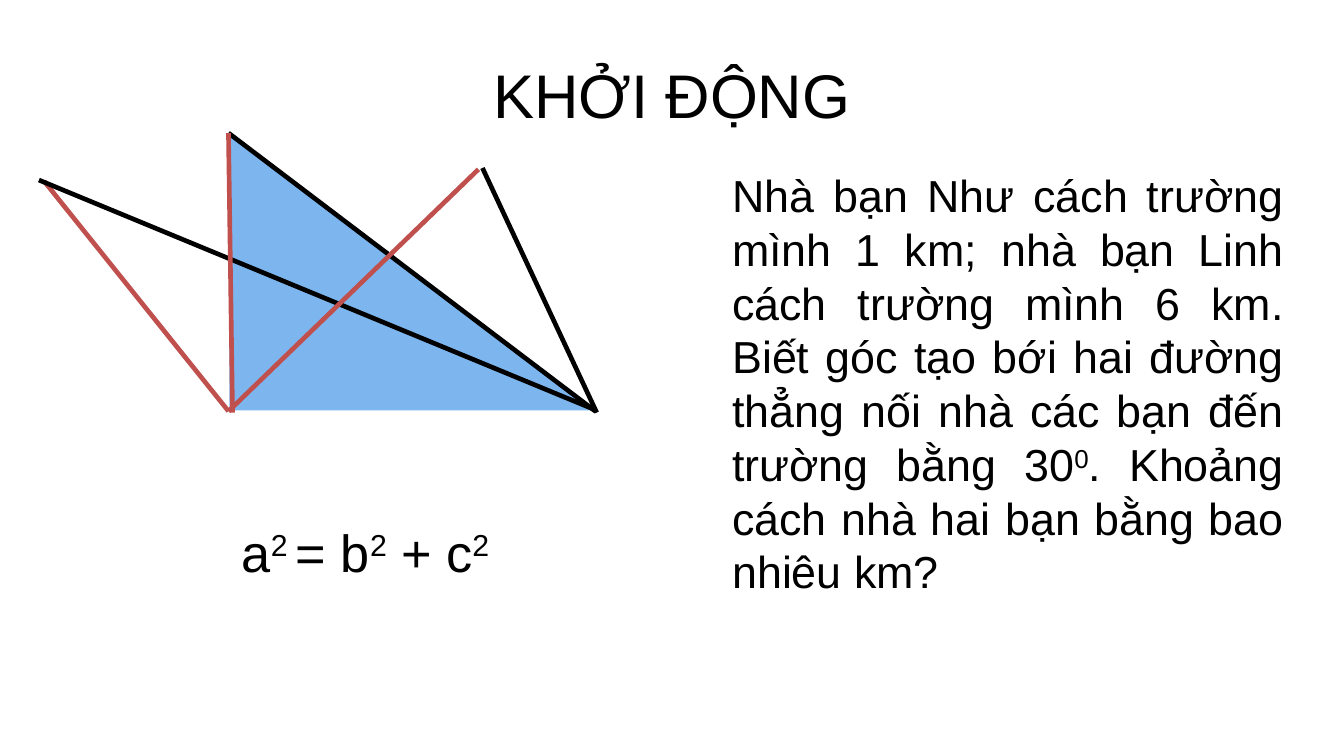
from lxml.etree import SubElement
from pptx import Presentation
from pptx.dml.color import RGBColor
from pptx.enum.shapes import MSO_CONNECTOR, MSO_SHAPE
from pptx.enum.text import MSO_ANCHOR, MSO_AUTO_SIZE, PP_ALIGN
from pptx.oxml.ns import qn
from pptx.util import Inches, Pt

COLORS = {"text": "000000", "red": "C0504D", "black": "000000",
          "triangle": "7DB6EF", "outline": "FFFFFF"}
FONT = "Arial"
TITLE = "KHỞI ĐỘNG"
TRIANGLE = (1.7, 0.99, 2.73, 2.07)
SIDES = [
    ("red", (1.7, 3.06), (0.33, 1.35)),
    ("black", (4.43, 3.05), (0.29, 1.34)),
    ("black", (4.43, 3.06), (1.7, 0.99)),
    ("red", (1.7, 3.06), (3.56, 1.26)),
    ("black", (4.44, 3.07), (3.59, 1.25)),
    ("red", (1.73, 3.07), (1.7, 0.99)),
]
FORMULA = [("a", False), ("2 ", True), ("= b", False), ("2", True),
           (" + c", False), ("2", True)]
PROBLEM = [
    ("Nhà bạn Như cách trường mình 1 km; nhà bạn Linh cách trường mình 6 km. "
     "Biết góc tạo bới hai đường thẳng nối nhà các bạn đến trường bằng 30", False),
    ("0", True),
    (". Khoảng cách nhà hai bạn bằng bao nhiêu km?", False),
]


def color(name):
    return RGBColor.from_string(COLORS[name])


def add_runs(paragraph, pieces, size):
    for text, raised in pieces:
        run = paragraph.add_run()
        run.text = text
        run.font.name = FONT
        run.font.size = Pt(size)
        run.font.color.rgb = color("text")
        if raised:
            run.font._element.set("baseline", "30000")


def add_text(slide, box, pieces, size, align):
    frame = slide.shapes.add_textbox(*map(Inches, box)).text_frame
    frame.word_wrap = True
    frame.auto_size = MSO_AUTO_SIZE.SHAPE_TO_FIT_TEXT
    paragraph = frame.paragraphs[0]
    paragraph.alignment = align
    paragraph.line_spacing = Pt(size * 1.2)
    add_runs(paragraph, pieces, size)


def add_side(slide, shade, start, end):
    side = slide.shapes.add_connector(
        MSO_CONNECTOR.STRAIGHT, *map(Inches, start + end))
    side.line.color.rgb = color(shade)
    side.line.width = Pt(2.5)
    SubElement(side._element.spPr, qn("a:effectLst"))


def main():
    """Build the warm-up slide with triangles, formula and word problem."""
    deck = Presentation()
    deck.slide_width, deck.slide_height = Inches(10), Inches(10 * 9 / 16)
    slide = deck.slides.add_slide(deck.slide_layouts[5])

    title = slide.shapes.title
    title.left, title.top, title.width, title.height = map(
        Inches, (0.5, 0.23, 9, 0.94))
    title.text_frame.vertical_anchor = MSO_ANCHOR.MIDDLE
    heading = title.text_frame.paragraphs[0]
    heading.alignment = PP_ALIGN.CENTER
    add_runs(heading, [(TITLE, False)], 33)

    triangle = slide.shapes.add_shape(
        MSO_SHAPE.RIGHT_TRIANGLE, *map(Inches, TRIANGLE))
    triangle.shadow.inherit = False
    triangle.fill.solid()
    triangle.fill.fore_color.rgb = color("triangle")
    triangle.line.color.rgb = color("outline")
    triangle.line.width = Pt(1)

    for side in SIDES:
        add_side(slide, *side)

    add_text(slide, (1.7, 3.82, 2.31, 0.57), FORMULA, 28, PP_ALIGN.LEFT)
    add_text(slide, (5.35, 1.2, 4.3, 3.33), PROBLEM, 24, PP_ALIGN.JUSTIFY)
    deck.save("out.pptx")


if __name__ == "__main__":
    main()
